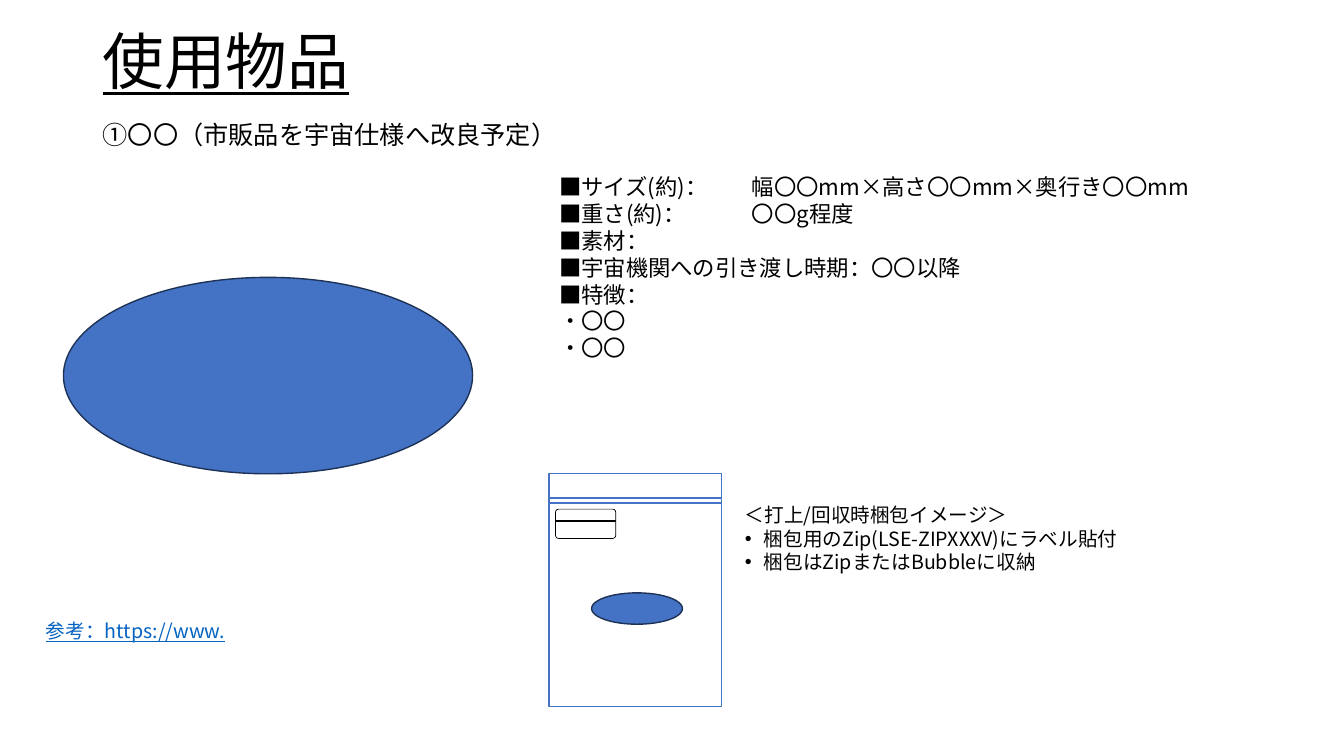
from lxml.etree import SubElement
from pptx import Presentation
from pptx.dml.color import RGBColor
from pptx.enum.shapes import MSO_CONNECTOR, MSO_SHAPE
from pptx.enum.text import MSO_ANCHOR
from pptx.oxml.ns import qn
from pptx.util import Cm, Pt


def rgb(value):
    return RGBColor.from_string(value)


def add_run(p, text, size=16, color="000000", underline=False, font="Noto Sans CJK JP"):
    r = p.add_run()
    r.text = text
    r.font.name = font
    r.font.size = Pt(size)
    r.font.color.rgb = rgb(color)
    if underline:
        r.font.underline = True
    SubElement(r.font._element, qn("a:ea"), typeface=font)


class SlideBuilder:
    """Holds the colours and the current slide, and adds each kind of element."""

    blue, navy, black, white, link = "4472C4", "1E3256", "000000", "FFFFFF", "0563C1"

    def __init__(self, prs):
        self.s = prs.slides.add_slide(prs.slide_layouts[6])

    def text(self, x, y, w, h, lines, anchor=MSO_ANCHOR.TOP, spacing=1.0,
             bullets_from=None, tab=None, **fmt):
        tf = self.s.shapes.add_textbox(Cm(x), Cm(y), Cm(w), Cm(h)).text_frame
        tf.word_wrap = True
        tf.vertical_anchor = anchor
        for i, line in enumerate(lines):
            p = tf.add_paragraph() if i else tf.paragraphs[0]
            p.line_spacing = spacing
            add_run(p, line, **fmt)
            if bullets_from is not None and i >= bullets_from:
                self.bullet(p)
            if tab and "\t" in line:
                tabs = SubElement(p._p.get_or_add_pPr(), qn("a:tabLst"))
                SubElement(tabs, qn("a:tab"), pos=str(Cm(tab)), algn="l")

    def bullet(self, p, indent=0.48):
        pPr = p._p.get_or_add_pPr()
        pPr.set("marL", str(Cm(indent)))
        pPr.set("indent", str(-Cm(indent)))
        SubElement(pPr, qn("a:buFont"), typeface="Arial")
        SubElement(pPr, qn("a:buChar"), char="•")

    def shape(self, kind, x, y, w, h, line, fill=None, width=1, parent=None):
        sp = (parent or self.s).shapes.add_shape(kind, Cm(x), Cm(y), Cm(w), Cm(h))
        sp.shadow.inherit = False
        if fill:
            sp.fill.solid()
            sp.fill.fore_color.rgb = rgb(fill)
        else:
            sp.fill.background()
        sp.line.color.rgb = rgb(line)
        sp.line.width = Pt(width)
        return sp

    def ellipse(self, x, y, w, h):
        return self.shape(MSO_SHAPE.OVAL, x, y, w, h, self.navy, self.blue)

    def line(self, x1, y1, x2, y2, color, width, parent):
        c = parent.shapes.add_connector(
            MSO_CONNECTOR.STRAIGHT, Cm(x1), Cm(y1), Cm(x2), Cm(y2))
        c.line.color.rgb = rgb(color)
        c.line.width = Pt(width)
        SubElement(c._element.spPr, qn("a:effectLst"))

    def zip_bag(self, x, y, w, h):
        bag = self.s.shapes.add_group_shape()
        for top, height in ((y, h), (y + 0.61, 0.13)):
            self.shape(MSO_SHAPE.RECTANGLE, x, top, w, height, self.blue, parent=bag)
        left, top, width = x + 0.16, y + 0.89, 1.52
        label = self.shape(MSO_SHAPE.ROUNDED_RECTANGLE, left, top, width, 0.74,
                           self.black, self.white, 0.5, bag)
        label.adjustments[0] = 0.11
        self.line(left, top + 0.3, left + width, top + 0.3, self.black, 1.5, bag)


def main():
    prs = Presentation()
    prs.slide_width, prs.slide_height = Cm(33.87), Cm(19.05)
    b = SlideBuilder(prs)
    b.text(2.34, 0.38, 29.21, 2.49, ["使用物品"], anchor=MSO_ANCHOR.MIDDLE,
           spacing=0.9, size=44, underline=True)
    b.text(2.34, 2.87, 30.25, 1.8, ["①〇〇（市販品を宇宙仕様へ改良予定）"], size=18)
    b.text(13.84, 4.24, 18.54, 5.05, [
        "■サイズ(約)：\t幅〇〇mm×高さ〇〇mm×奥行き〇〇mm",
        "■重さ(約)：\t〇〇g程度",
        "■素材：",
        "■宇宙機関への引き渡し時期：〇〇以降",
        "■特徴：",
        "・〇〇",
        "・〇〇",
    ], tab=4.86)
    b.text(18.52, 12.55, 10.8, 2.06, [
        "＜打上/回収時梱包イメージ＞",
        "梱包用のZip(LSE-ZIPXXXV)にラベル貼付",
        "梱包はZipまたはBubbleに収納",
    ], bullets_from=1, size=14)
    b.zip_bag(13.84, 11.94, 4.34, 5.87)
    b.text(0.91, 15.47, 12.07, 0.86, ["参考：https://www."],
           size=14, color=b.link, underline=True)
    b.ellipse(1.6, 6.99, 10.31, 4.95)
    b.ellipse(14.91, 14.94, 2.29, 0.79)
    prs.save("out.pptx")


if __name__ == "__main__":
    main()
